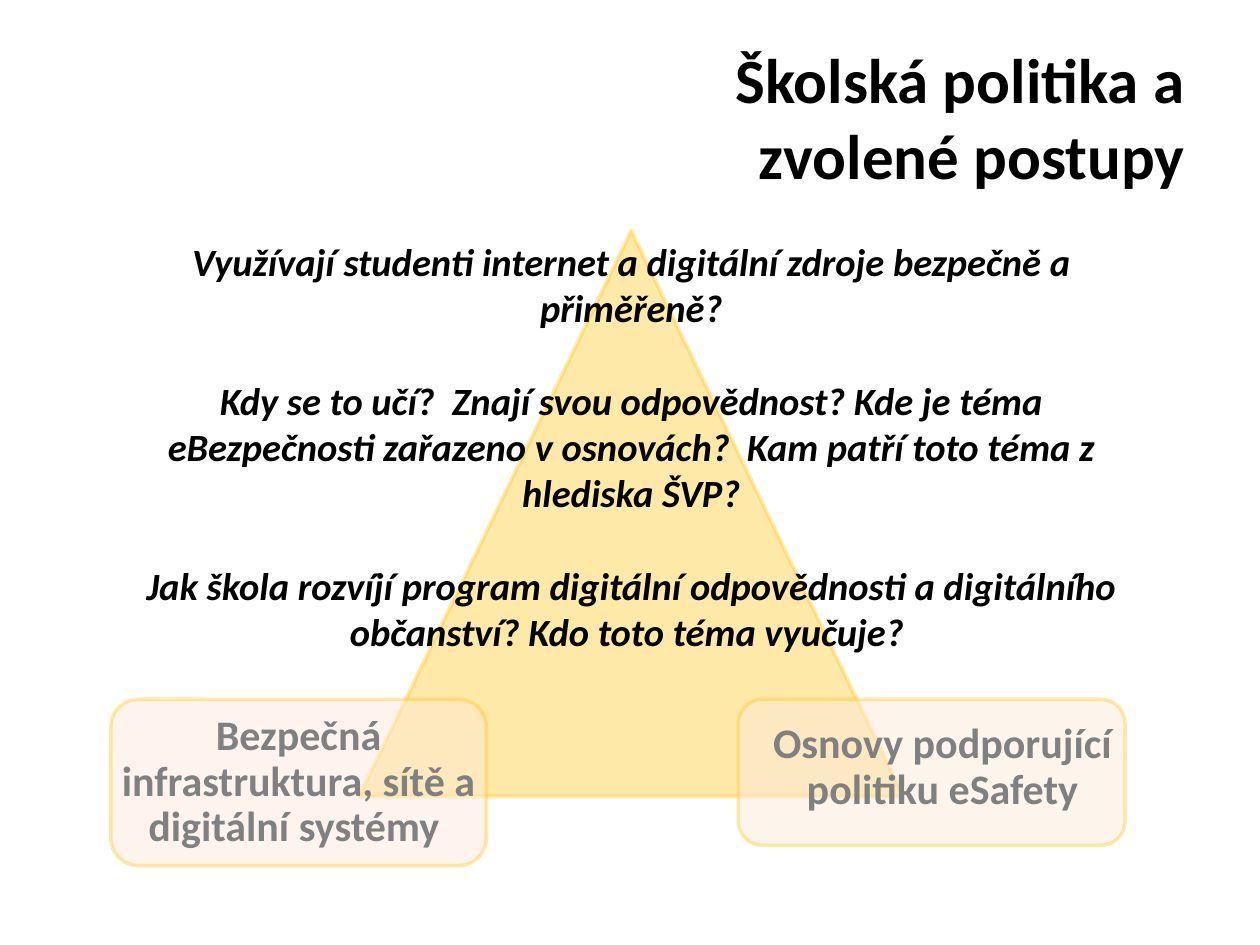
from lxml import etree
from pptx import Presentation
from pptx.dml.color import RGBColor
from pptx.enum.shapes import MSO_SHAPE as Shape
from pptx.enum.text import MSO_ANCHOR as Anchor, PP_ALIGN as Align
from pptx.oxml.ns import qn
from pptx.util import Inches, Pt

COLORS = {"text": "000000", "label": "808080", "gold": "FFC000", "cream": "FDEADA"}
FONT = "Calibri"

QUESTIONS = [
    "Využívají studenti internet a digitální zdroje bezpečně a přiměřeně?",
    "Kdy se to učí?  Znají svou odpovědnost? Kde je téma eBezpečnosti zařazeno "
    "v osnovách?  Kam patří toto téma z hlediska ŠVP?",
    "Jak škola rozvíjí program digitální odpovědnosti a digitálního občanství? "
    "Kdo toto téma vyučuje? ",
]


def set_color(fill, color, opacity):
    """Make a fill solid, with its opacity in percent."""
    fill.solid()
    fill.fore_color.rgb = RGBColor.from_string(COLORS[color])
    color_element = fill._xPr.find(qn("a:solidFill"))[0]
    etree.SubElement(color_element, qn("a:alpha"), val=str(opacity * 1000))


def add_pale_shape(slide, kind, box, fill, opacity, line_width, line_opacity):
    """Add a translucent shape with a translucent gold outline."""
    shape = slide.shapes.add_shape(kind, *map(Inches, box))
    shape.shadow.inherit = False
    set_color(shape.fill, fill, opacity)
    set_color(shape.line.fill, "gold", line_opacity)
    shape.line.width = Pt(line_width)


def add_text(slide, box, texts, size, align, color="text", italic=False,
             anchor=Anchor.MIDDLE, margin=None, line_spacing=None, gap=0):
    """Add a text box with one paragraph per text, gap points apart."""
    frame = slide.shapes.add_textbox(*map(Inches, box)).text_frame
    frame.word_wrap = True
    frame.vertical_anchor = anchor
    if margin is not None:
        frame.margin_left = frame.margin_right = Inches(margin)
        frame.margin_top = frame.margin_bottom = Inches(margin)
    for index, text in enumerate(texts):
        paragraph = frame.add_paragraph() if index else frame.paragraphs[0]
        paragraph.text = text
        paragraph.alignment = align
        paragraph.line_spacing = line_spacing
        if index:
            paragraph.space_before = Pt(gap)
        font = paragraph.font
        font.name, font.size = FONT, Pt(size)
        font.bold, font.italic = True, italic
        font.color.rgb = RGBColor.from_string(COLORS[color])


def add_label_box(slide, box, text_box, text, opacity, line_opacity):
    add_pale_shape(slide, Shape.ROUNDED_RECTANGLE, box, "cream", opacity, 2, line_opacity)
    add_text(slide, text_box, [text], 24, Align.CENTER, color="label",
             margin=0.07, line_spacing=0.9)


def main():
    presentation = Presentation()
    presentation.slide_width, presentation.slide_height = Inches(10), Inches(7.5)
    slide = presentation.slides.add_slide(presentation.slide_layouts[6])

    add_text(slide, (1.38, 0.3, 8.12, 1.25), ["Školská politika a\vzvolené postupy"],
             36, Align.RIGHT)
    add_pale_shape(slide, Shape.ISOSCELES_TRIANGLE, (2.85, 1.83, 4.32, 4.49),
                   "gold", 34, 2.25, 31)
    add_label_box(slide, (5.86, 5.55, 3.07, 1.16), (5.86, 5.57, 3.24, 1.05),
                  "Osnovy podporující politiku eSafety", 50, 32)
    add_label_box(slide, (0.88, 5.55, 2.98, 1.32), (0.87, 5.55, 3, 1.32),
                  "Bezpečná infrastruktura, sítě a digitální systémy ", 48, 34)
    add_text(slide, (0.91, 1.84, 8.2, 3.43), QUESTIONS, 22, Align.CENTER,
             italic=True, anchor=Anchor.TOP, gap=26.5)

    presentation.save("out.pptx")


if __name__ == "__main__":
    main()
